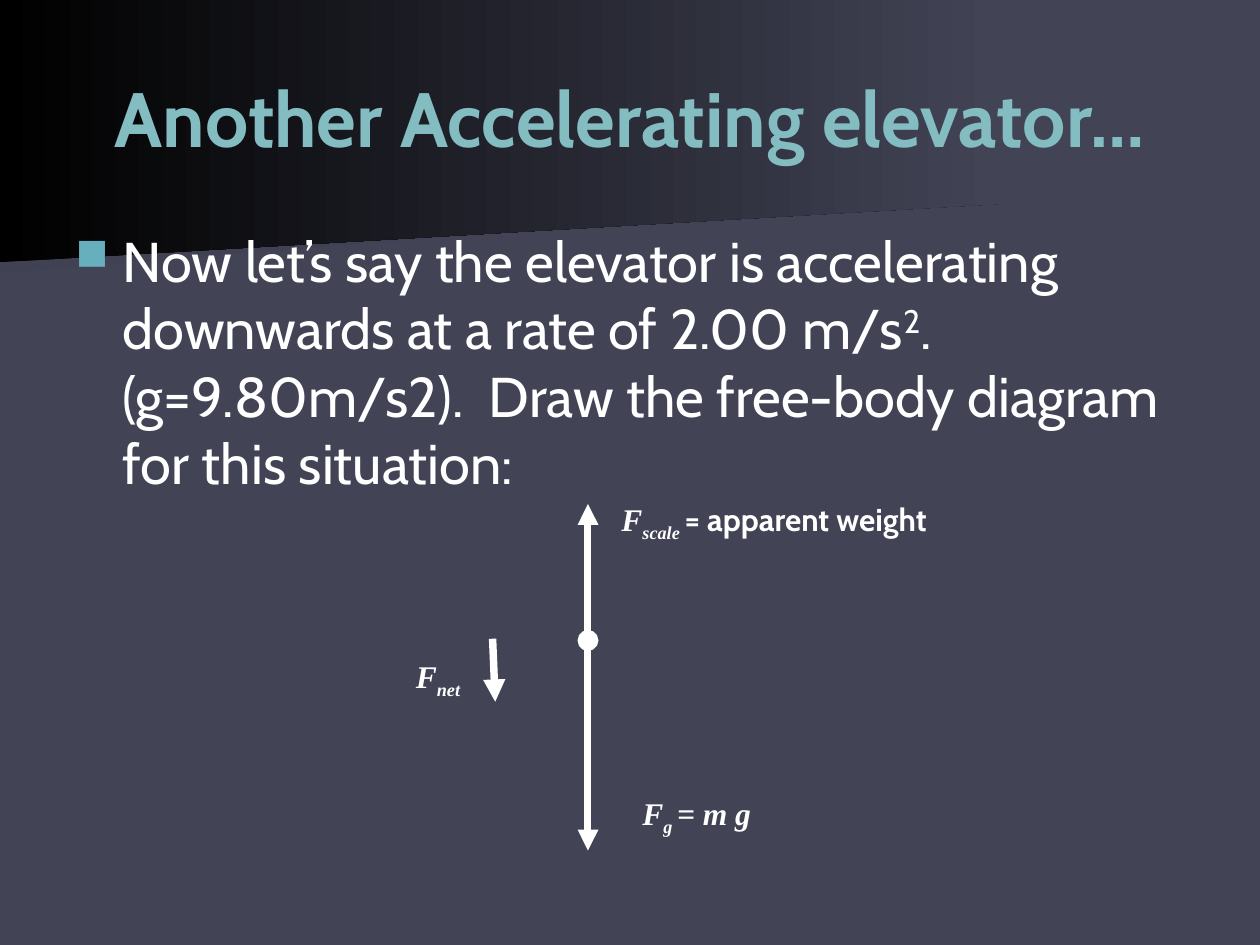
from dataclasses import dataclass

from lxml.etree import SubElement
from pptx import Presentation
from pptx.dml.color import RGBColor
from pptx.enum.shapes import MSO_CONNECTOR
from pptx.enum.text import MSO_ANCHOR as Anchor, PP_ALIGN as Align
from pptx.oxml.ns import qn
from pptx.util import Pt

WHITE = "FFFFFF"
SLATE = "424456"
SANS, SERIF = "Cabin", "Times New Roman"


@dataclass
class Panel:
    points: list[tuple[float, float]]
    start_color: str


@dataclass
class Arrow:
    start: tuple[float, float]
    end: tuple[float, float]
    width: float = 4
    head: str = "none"
    tail: str = "none"


@dataclass
class Piece:
    text: str
    baseline: int = 0
    font: str = SERIF
    italic: bool = True


@dataclass
class Label:
    box: tuple[float, float, float, float]
    pieces: list[Piece]
    align: Align = Align.LEFT


PANELS = [
    Panel([(560.2, 110.2), (0, 156.2), (0, 72.7), (560.9, 72.7), (560.2, 92.2)], "404254"),
    Panel([(570.2, 116.6), (0, 149.8), (0, 0), (570.2, 0)], "000000"),
]

ARROWS = [
    Arrow((336, 366), (336, 486), head="oval", tail="triangle"),
    Arrow((336, 288), (336, 366), head="triangle"),
    Arrow((281.5, 365), (283, 401), width=4.25, tail="triangle"),
]

LABELS = [
    Label((348, 282, 240, 28.8),
          [Piece("F"), Piece("scale ", -25), Piece("= apparent weight", font=SANS, italic=False)]),
    Label((360, 450, 102, 28.8), [Piece("F"), Piece("g ", -25), Piece("= m g")]),
    Label((186, 372, 84, 28.8), [Piece("F"), Piece("net", -25)], Align.RIGHT),
]


def color(value: str) -> RGBColor:
    return RGBColor.from_string(value)


def add_panel(slide, panel: Panel) -> None:
    first, *rest = [(Pt(x), Pt(y)) for x, y in panel.points]
    builder = slide.shapes.build_freeform(*first, scale=1.0)
    builder.add_line_segments(rest, close=True)
    shape = builder.convert_to_shape()
    shape.shadow.inherit = False
    shape.line.fill.background()
    shape.fill.gradient()
    shape.fill.gradient_angle = 0
    for stop, position, value in zip(shape.fill.gradient_stops, (0, 1), (panel.start_color, SLATE)):
        stop.position = position
        stop.color.rgb = color(value)


def add_arrow(slide, arrow: Arrow) -> None:
    ends = [Pt(value) for value in (*arrow.start, *arrow.end)]
    connector = slide.shapes.add_connector(MSO_CONNECTOR.STRAIGHT, *ends)
    connector.line.width = Pt(arrow.width)
    connector.line.color.rgb = color(WHITE)
    line = connector.line._get_or_add_ln()
    SubElement(line, qn("a:headEnd"), type=arrow.head)
    SubElement(line, qn("a:tailEnd"), type=arrow.tail)
    SubElement(connector._element.spPr, qn("a:effectLst"))


def add_text_box(slide, box: tuple[float, float, float, float], anchor: Anchor = Anchor.TOP):
    """Add a wrapping text box and return its first paragraph."""
    frame = slide.shapes.add_textbox(*map(Pt, box)).text_frame
    frame.word_wrap = True
    frame.vertical_anchor = anchor
    return frame.paragraphs[0]


def style(paragraph, size: float, value: str, bold: bool) -> None:
    paragraph.font.size = Pt(size)
    paragraph.font.color.rgb = color(value)
    paragraph.font.bold = bold


def add_run(paragraph, text: str, baseline: int = 0):
    """Add a run, raised or lowered by a percentage of its size."""
    run = paragraph.add_run()
    run.text = text
    if baseline:
        run._r.get_or_add_rPr().set("baseline", str(baseline * 1000))
    return run


def add_label(slide, label: Label) -> None:
    paragraph = add_text_box(slide, label.box)
    paragraph.alignment = label.align
    style(paragraph, 18, WHITE, bold=True)
    for piece in label.pieces:
        font = add_run(paragraph, piece.text, piece.baseline).font
        font.name = piece.font
        font.italic = piece.italic


def add_title(slide) -> None:
    paragraph = add_text_box(slide, (0, 21.6, 720, 90), Anchor.MIDDLE)
    paragraph.alignment = Align.CENTER
    style(paragraph, 44, "83BCC1", bold=True)
    paragraph.font.name = SANS
    add_run(paragraph, "Another Accelerating elevator…")


def add_bullet(paragraph, character: str, value: str, percent: int, indent: float) -> None:
    properties = paragraph._p.get_or_add_pPr()
    properties.set("marL", str(Pt(indent)))
    properties.set("indent", str(-Pt(indent)))
    bullet_color = SubElement(properties, qn("a:buClr"))
    SubElement(bullet_color, qn("a:srgbClr"), val=value)
    SubElement(properties, qn("a:buSzPct"), val=str(percent * 1000))
    SubElement(properties, qn("a:buChar"), char=character)


def add_body(slide) -> None:
    paragraph = add_text_box(slide, (36, 126, 648, 354))
    add_bullet(paragraph, "■", "67AFBD", 80, 27)
    style(paragraph, 32, WHITE, bold=False)
    paragraph.font.name = SANS
    add_run(paragraph, "Now let’s say the elevator is accelerating downwards at a rate of 2.00 m/s")
    add_run(paragraph, "2", 30)
    add_run(paragraph, ". (g=9.80m/s2).  Draw the free-body diagram for this situation:")


def main() -> None:
    presentation = Presentation()
    presentation.slide_width, presentation.slide_height = Pt(720), Pt(540)
    slide = presentation.slides.add_slide(presentation.slide_layouts[6])
    slide.background.fill.solid()
    slide.background.fill.fore_color.rgb = color(SLATE)

    for panel in PANELS:
        add_panel(slide, panel)
    add_title(slide)
    add_body(slide)
    for arrow in ARROWS:
        add_arrow(slide, arrow)
    for label in LABELS:
        add_label(slide, label)
    presentation.save("out.pptx")


if __name__ == "__main__":
    main()
